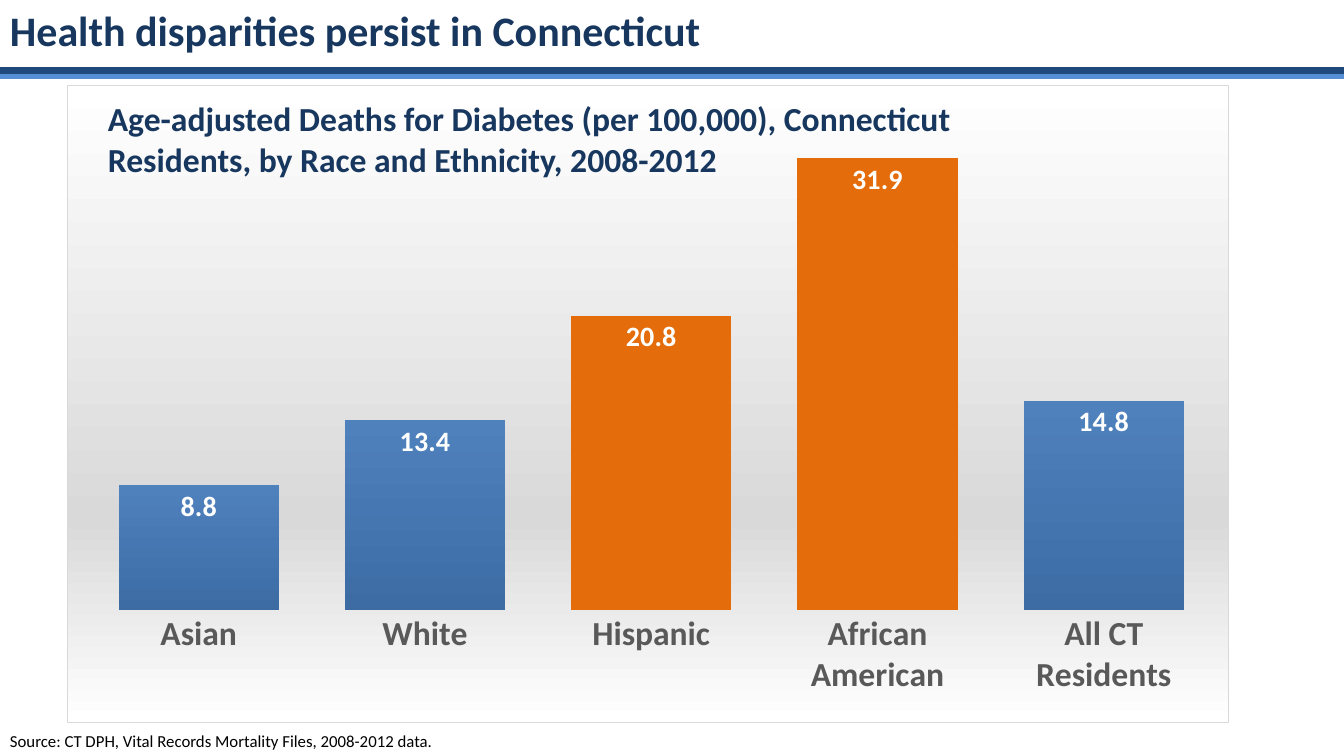
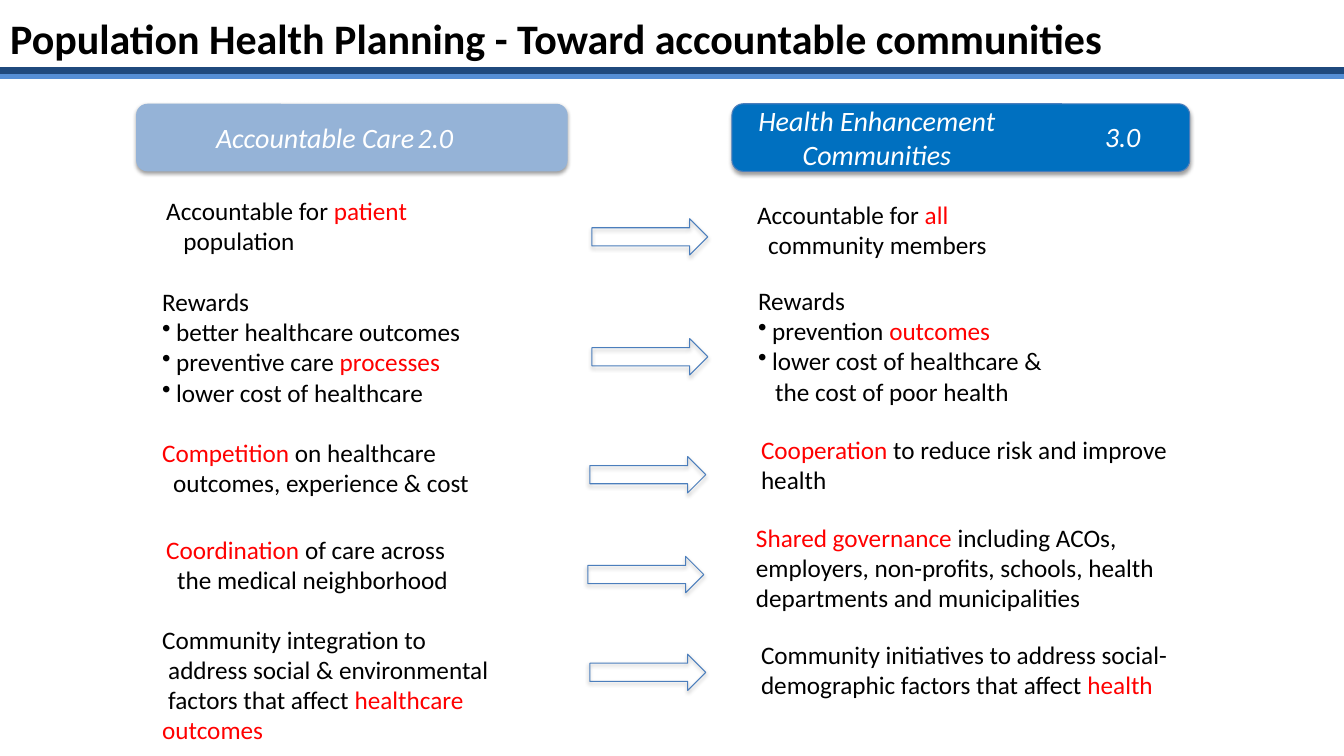
from dataclasses import dataclass

from lxml import etree
from pptx import Presentation
from pptx.chart.data import CategoryChartData
from pptx.dml.color import RGBColor
from pptx.enum.chart import XL_CHART_TYPE, XL_LABEL_POSITION, XL_TICK_MARK
from pptx.enum.shapes import MSO_CONNECTOR, MSO_SHAPE
from pptx.enum.text import MSO_ANCHOR, MSO_AUTO_SIZE, PP_ALIGN
from pptx.oxml import parse_xml
from pptx.oxml.ns import nsdecls, qn
from pptx.util import Pt

PX = 9144  # EMU in one px, 100 px to the inch
SLIDE_W, SLIDE_H = 1333, 750
TITLE_ONLY = 5

COLUMNS = XL_CHART_TYPE.COLUMN_CLUSTERED
INSIDE_END = XL_LABEL_POSITION.INSIDE_END
NO_TICK = XL_TICK_MARK.NONE
STRAIGHT = MSO_CONNECTOR.STRAIGHT
ARROW, ROUNDED = MSO_SHAPE.RIGHT_ARROW, MSO_SHAPE.ROUNDED_RECTANGLE
TOP, MIDDLE = MSO_ANCHOR.TOP, MSO_ANCHOR.MIDDLE
FIT_SHAPE, NO_FIT = MSO_AUTO_SIZE.SHAPE_TO_FIT_TEXT, MSO_AUTO_SIZE.NONE
LEFT = PP_ALIGN.LEFT


@dataclass(frozen=True)
class Theme:
    font: str = "Calibri"
    black: str = "000000"
    white: str = "FFFFFF"
    navy: str = "17375E"
    accent: str = "FF0000"
    rule_dark: str = "1F497D"
    rule_light: str = "558ED5"
    outline: str = "4B7EBC"
    care: str = "95B3D7"
    communities: str = "0070C0"
    axis_text: str = "595959"
    grey: str = "D9D9D9"
    bar_top: str = "4F81BD"
    bar_bottom: str = "3D6CA4"
    highlight: str = "E46C0A"
    heading: int = 30
    chart_heading: int = 24
    label: int = 20
    body: int = 18
    source: int = 12
    chart: int = 10


@dataclass(frozen=True)
class Line:
    """One paragraph; parts between bars take the accent colour."""
    text: str
    margin: int = 0
    indent: int = 0
    bullet: bool = False
    tab: int = 0


THEME = Theme()


def bullet(text):
    return Line(text, margin=14, indent=-14, bullet=True)


DEATHS = {"Asian": 8.8, "White": 13.4, "Hispanic": 20.8,
          "African American": 31.9, "All CT Residents": 14.8}
HIGHLIGHTED = ("Hispanic", "African American")

# Each row: box and lines on the left, arrow corner, box and lines on the right
COMPARISON = [
    ((155, 189, 358, 71),
     ["Accountable for |patient|", Line("population", indent=17)],
     (587, 217),
     (741, 193, 425, 71),
     ["Accountable for |all|", Line("community members", indent=11)]),
    ((151, 279, 387, 131),
     ["Rewards", bullet("better healthcare outcomes"),
      bullet("preventive care |processes|"), bullet("lower cost of healthcare")],
     (587, 336),
     (742, 278, 463, 131),
     ["Rewards", bullet("prevention |outcomes|"),
      bullet("lower cost of healthcare &"),
      Line("the cost of poor health", indent=17)]),
    ((151, 429, 387, 71),
     ["|Competition| on healthcare",
      Line("outcomes, experience & cost", indent=11)],
     (585, 453),
     (745, 426, 457, 71),
     ["|Cooperation| to reduce risk and improve health"]),
    ((155, 525, 383, 71),
     ["|Coordination| of care across",
      Line("the medical neighborhood", indent=11)],
     (583, 552),
     (740, 513, 463, 101),
     ["|Shared governance| including ACOs, employers, non-profits, schools, "
      "health departments and municipalities"]),
    ((151, 614, 411, 131),
     ["Community integration to",
      Line("address social & environmental", indent=6),
      Line("factors that affect |healthcare outcomes|", indent=6)],
     (585, 649),
     (745, 629, 463, 71),
     ["Community initiatives to address social-demographic factors that "
      "affect |health|"]),
]


def rgb(color):
    return RGBColor.from_string(color)


def emu(*lengths):
    return [length * PX for length in lengths]


# Text
def style_font(font, size, color, bold=False, italic=False):
    font.name, font.size = THEME.font, Pt(size)
    font.bold, font.italic = bold, italic
    font.color.rgb = rgb(color)


def layout_paragraph(paragraph, line):
    """Set indents, bullet and tab stop of one paragraph."""
    props = paragraph._p.get_or_add_pPr()
    props.set("marL", str(line.margin * PX))
    props.set("indent", str(line.indent * PX))
    if line.bullet:
        etree.SubElement(props, qn("a:buChar")).set("char", "•")
    if line.tab:
        stops = etree.SubElement(props, qn("a:tabLst"))
        etree.SubElement(stops, qn("a:tab"),
                         {"pos": str(line.tab * PX), "algn": "l"})


def write(shape, *lines, size=THEME.body, color=THEME.black, bold=False,
          italic=False, anchor=TOP, fit=NO_FIT, wrap=True):
    frame = shape.text_frame
    frame.word_wrap, frame.auto_size = wrap, fit
    frame.vertical_anchor = anchor
    for number, line in enumerate(lines):
        if isinstance(line, str):
            line = Line(line)
        paragraph = frame.add_paragraph() if number else frame.paragraphs[0]
        layout_paragraph(paragraph, line)
        paragraph.alignment = LEFT
        for place, part in enumerate(line.text.split("|")):
            if part:
                run = paragraph.add_run()
                run.text = part
                style_font(run.font, size, THEME.accent if place % 2 else color,
                           bold, italic)


def add_text(slide, box, *lines, **text_format):
    write(slide.shapes.add_textbox(*emu(*box)), *lines, fit=FIT_SHAPE,
          **text_format)


def place_title(slide, box, text, **text_format):
    title = slide.shapes.title
    title.left, title.top, title.width, title.height = emu(*box)
    write(title, text, bold=True, anchor=MIDDLE, **text_format)


# Shapes
def add_shadowed(slide, preset, box, fill=None, line=None, opacity=38, distance=1.6):
    shape = slide.shapes.add_shape(preset, *emu(*box))
    if fill:
        shape.fill.solid()
        shape.fill.fore_color.rgb = rgb(fill)
    else:
        shape.fill.background()
    if line:
        shape.line.color.rgb = rgb(line)
        shape.line.width = Pt(0.75)
    else:
        shape.line.fill.background()
    shape.shadow.inherit = False
    shape.element.spPr.find(qn("a:effectLst")).append(parse_xml(
        f'<a:outerShdw {nsdecls("a")} blurRad="{Pt(3.1)}" dist="{Pt(distance)}" '
        'dir="5400000" rotWithShape="0"><a:srgbClr val="000000">'
        f'<a:alpha val="{opacity * 1000}"/></a:srgbClr></a:outerShdw>'))
    return shape


def add_master_rules(prs, slide):
    """Draw the double rule below the heading and move it to the master."""
    master_tree = prs.slide_master.shapes.element
    rules = ((75, THEME.rule_light), (70, THEME.rule_dark))
    for number, (y, color) in enumerate(rules):
        rule = slide.shapes.add_connector(STRAIGHT, *emu(0, y, SLIDE_W, y))
        rule.line.color.rgb = rgb(color)
        rule.line.width = Pt(4.5)
        etree.SubElement(rule.element.spPr, qn("a:effectLst"))
        rule.element.xpath("./p:nvCxnSpPr/p:cNvPr")[0].set("id", str(20 + number))
        master_tree.insert_element_before(rule.element, "p:extLst")


# Chart
def style_chart_area(chart):
    """Gradient background, thin border and fixed plot area."""
    stops = ((0, THEME.white), (68, THEME.grey), (100, THEME.white))
    stop_xml = "".join(f'<a:gs pos="{place * 1000}"><a:srgbClr val="{color}"/></a:gs>'
                       for place, color in stops)
    chart.element.find(qn("c:chart")).addnext(parse_xml(
        f'<c:spPr {nsdecls("c", "a")}><a:gradFill><a:gsLst>{stop_xml}</a:gsLst>'
        f'<a:lin ang="5400000" scaled="0"/></a:gradFill><a:ln w="{Pt(0.75)}">'
        f'<a:solidFill><a:srgbClr val="{THEME.grey}"/></a:solidFill></a:ln></c:spPr>'))
    plot_area = chart.element.find(".//" + qn("c:plotArea"))
    for automatic in plot_area.findall(qn("c:layout")):
        plot_area.remove(automatic)
    sizes = {"x": 0.016, "y": 0.024, "w": 0.974, "h": 0.8}
    size_xml = "".join(f'<c:{key} val="{size}"/>' for key, size in sizes.items())
    plot_area.insert(0, parse_xml(
        f'<c:layout {nsdecls("c")}><c:manualLayout><c:layoutTarget val="inner"/>'
        f'<c:xMode val="edge"/><c:yMode val="edge"/>{size_xml}'
        '</c:manualLayout></c:layout>'))


def style_bars(plot):
    plot.gap_width = 41
    plot.vary_by_categories = False
    deaths = plot.series[0]
    deaths.invert_if_negative = False
    fill = deaths.format.fill
    fill.gradient()
    fill.gradient_angle = 270
    for stop, color in zip(fill.gradient_stops, (THEME.bar_top, THEME.bar_bottom)):
        stop.color.rgb = rgb(color)
    for index, group in enumerate(DEATHS):
        if group in HIGHLIGHTED:
            bar_fill = deaths.points[index].format.fill
            bar_fill.solid()
            bar_fill.fore_color.rgb = rgb(THEME.highlight)
    labels = deaths.data_labels
    labels.show_value = True
    labels.position = INSIDE_END
    labels.number_format, labels.number_format_is_linked = "#,##0.0", False
    style_font(labels.font, THEME.label, THEME.white, bold=True)


def add_deaths_chart(slide, box):
    data = CategoryChartData()
    data.categories = list(DEATHS)
    data.add_series("Series 1", list(DEATHS.values()))
    chart = slide.shapes.add_chart(COLUMNS, *emu(*box), data).chart
    chart.has_title = chart.has_legend = False
    style_font(chart.font, THEME.chart, THEME.black)
    groups, rates = chart.category_axis, chart.value_axis
    groups.major_tick_mark = groups.minor_tick_mark = NO_TICK
    groups.format.line.fill.background()
    style_font(groups.tick_labels.font, THEME.chart_heading, THEME.axis_text, bold=True)
    rates.minimum_scale, rates.maximum_scale, rates.major_unit = 0, 36, 9
    rates.has_major_gridlines = False
    rates.visible = False
    style_bars(chart.plots[0])
    style_chart_area(chart)


# Slides
def build_disparities(slide):
    add_deaths_chart(slide, (66, 84, 1153, 633))
    title = slide.shapes.title.element
    title.getparent().append(title)  # the title lies over the chart
    place_title(slide, (97, 100, 903, 75),
                "Age-adjusted Deaths for Diabetes (per 100,000), Connecticut "
                "Residents, by Race and Ethnicity, 2008-2012",
                size=THEME.chart_heading, color=THEME.navy)
    add_text(slide, (0, 720, 660, 30),
             "Source: CT DPH, Vital Records Mortality Files, 2008-2012 data.",
             size=THEME.source)
    add_text(slide, (0, 0, 722, 61), "Health disparities persist in Connecticut",
             size=THEME.heading, color=THEME.navy, bold=True, wrap=False)


def build_communities(slide):
    place_title(slide, (0, 0, 1146, 75),
                "Population Health Planning - Toward accountable communities",
                size=THEME.heading)
    header = {"size": THEME.label, "color": THEME.white, "italic": True}
    care = add_shadowed(slide, ROUNDED, (135, 103, 428, 67), fill=THEME.care)
    care.text_frame.margin_left = 76 * PX
    write(care, Line("Accountable Care\t2.0", tab=234), anchor=MIDDLE, **header)
    communities = add_shadowed(slide, ROUNDED, (726, 103, 454, 67),
                               fill=THEME.communities, line=THEME.outline)
    write(communities, Line("Health Enhancement", indent=13),
          Line("Communities", indent=57), anchor=MIDDLE, **header)
    add_text(slide, (1086, 114, 94, 44), "3.0", **header)
    for care_box, care_lines, arrow_corner, goal_box, goal_lines in COMPARISON:
        add_text(slide, care_box, *care_lines)
        add_shadowed(slide, ARROW, (*arrow_corner, 115, 36), line=THEME.outline,
                     opacity=35, distance=1.8)
        add_text(slide, goal_box, *goal_lines)


def main():
    prs = Presentation()
    prs.slide_width, prs.slide_height = emu(SLIDE_W, SLIDE_H)
    layout = prs.slide_layouts[TITLE_ONLY]
    disparities, communities = [prs.slides.add_slide(layout) for _ in range(2)]
    add_master_rules(prs, disparities)
    build_disparities(disparities)
    build_communities(communities)
    prs.save("out.pptx")


if __name__ == "__main__":
    main()
